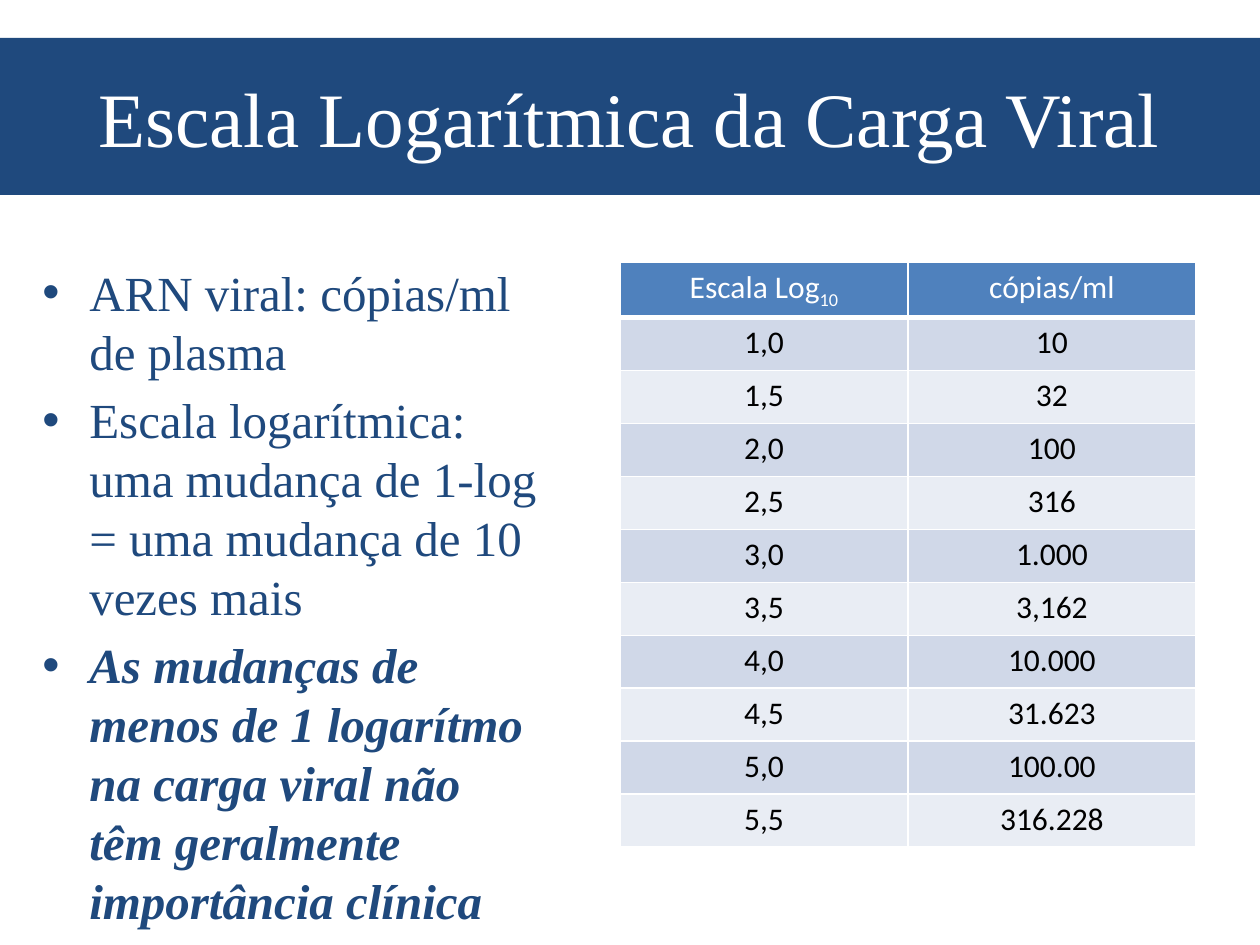
from dataclasses import dataclass

from lxml.etree import SubElement
from pptx import Presentation
from pptx.dml.color import RGBColor
from pptx.enum.shapes import MSO_SHAPE
from pptx.enum.text import MSO_ANCHOR, PP_ALIGN
from pptx.oxml.ns import qn
from pptx.util import Emu, Pt

EMU_PER_PX = 914400 / 126
SERIF, SANS = "Times New Roman", "Calibri"
NAVY = RGBColor(0x1F, 0x49, 0x7D)
BLUE = RGBColor(0x4F, 0x81, 0xBD)
BAND_DARK = RGBColor(0xD0, 0xD8, 0xE8)
BAND_LIGHT = RGBColor(0xE9, 0xED, 0xF4)
WHITE = RGBColor(0xFF, 0xFF, 0xFF)
BLACK = RGBColor(0x00, 0x00, 0x00)


@dataclass(frozen=True)
class Box:
    x: int
    y: int
    w: int
    h: int

    def emu(self) -> tuple:
        return tuple(px(v) for v in (self.x, self.y, self.w, self.h))


@dataclass(frozen=True)
class Bullet:
    text: str
    strong: bool = False


@dataclass(frozen=True)
class Reading:
    log: str
    copies: str


TITLE = Box(0, 38, 1260, 157)
BODY = Box(30, 256, 527, 646)
TABLE = Box(620, 262, 576, 583)
BULLET_INDENT = 47

BULLETS = [
    Bullet("ARN viral: cópias/ml de plasma"),
    Bullet("Escala logarítmica: uma mudança de 1-log = uma mudança de 10 vezes mais"),
    Bullet("As mudanças de menos de 1 logarítmo na carga viral não têm "
           "geralmente importância clínica", strong=True),
]
READINGS = [
    Reading("1,0", "10"),
    Reading("1,5", "32"),
    Reading("2,0", "100"),
    Reading("2,5", "316"),
    Reading("3,0", "1.000"),
    Reading("3,5", "3,162"),
    Reading("4,0", "10.000"),
    Reading("4,5", "31.623"),
    Reading("5,0", "100.00"),
    Reading("5,5", "316.228"),
]


def px(value: int) -> Emu:
    return Emu(round(value * EMU_PER_PX))


def add_text(p, text: str, *, size: int, font: str, color: RGBColor,
             align=None, strong: bool = False, baseline: int = 0) -> None:
    if align is not None:
        p.alignment = align
    r = p.add_run()
    r.text = text
    r.font.size, r.font.name = Pt(size), font
    r.font.color.rgb = color
    if strong:
        r.font.bold = r.font.italic = True
    if baseline:
        r.font._element.set("baseline", str(baseline * 1000))


def add_title(slide, text: str) -> None:
    sp = slide.shapes.add_shape(MSO_SHAPE.RECTANGLE, *TITLE.emu())
    sp.shadow.inherit = False
    sp.fill.solid()
    sp.fill.fore_color.rgb = NAVY
    sp.line.fill.background()
    tf = sp.text_frame
    tf.word_wrap = True
    tf.vertical_anchor = MSO_ANCHOR.MIDDLE
    add_text(tf.paragraphs[0], text, size=44, font=SERIF, color=WHITE,
             align=PP_ALIGN.CENTER)


def set_bullet(p) -> None:
    pPr = p._p.get_or_add_pPr()
    pPr.set("marL", str(px(BULLET_INDENT)))
    pPr.set("indent", str(-px(BULLET_INDENT)))
    spacing = SubElement(pPr, qn("a:spcBef"))
    SubElement(spacing, qn("a:spcPct")).set("val", "20000")
    SubElement(pPr, qn("a:buFont")).set("typeface", "Arial")
    SubElement(pPr, qn("a:buChar")).set("char", "•")


def add_bullets(slide, bullets: list[Bullet]) -> None:
    tf = slide.shapes.add_textbox(*BODY.emu()).text_frame
    tf.word_wrap = True
    for i, bullet in enumerate(bullets):
        p = tf.add_paragraph() if i else tf.paragraphs[0]
        set_bullet(p)
        add_text(p, bullet.text, size=28, font=SERIF, color=NAVY,
                 strong=bullet.strong)


def style_cell(cell, fill: RGBColor, bottom: int = 1, top: int = 1) -> None:
    tcPr = cell._tc.get_or_add_tcPr()
    for side, width in (("L", 1), ("R", 1), ("T", top), ("B", bottom)):
        ln = SubElement(tcPr, qn(f"a:ln{side}"), w=str(Pt(width)))
        solid = SubElement(ln, qn("a:solidFill"))
        SubElement(solid, qn("a:srgbClr"), val=str(WHITE))
    cell.fill.solid()
    cell.fill.fore_color.rgb = fill


def add_scale_table(slide, readings: list[Reading]) -> None:
    rows = len(readings) + 1
    table = slide.shapes.add_table(rows, 2, *TABLE.emu()).table
    for col in table.columns:
        col.width = px(TABLE.w // 2)
    for row in table.rows:
        row.height = px(TABLE.h // rows)

    values = [("Escala Log", "cópias/ml")] + [(x.log, x.copies) for x in readings]
    for i, row in enumerate(values):
        header = i == 0
        fill = BLUE if header else BAND_DARK if i % 2 else BAND_LIGHT
        for j, text in enumerate(row):
            cell = table.cell(i, j)
            style_cell(cell, fill, bottom=3 if header else 1, top=3 if i == 1 else 1)
            add_text(cell.text_frame.paragraphs[0], text, size=18, font=SANS,
                     color=WHITE if header else BLACK, align=PP_ALIGN.CENTER)
    add_text(table.cell(0, 0).text_frame.paragraphs[0], "10", size=18,
             font=SANS, color=WHITE, baseline=-25)


def main() -> None:
    prs = Presentation()
    prs.slide_width, prs.slide_height = px(1260), px(945)
    slide = prs.slides.add_slide(prs.slide_layouts[6])
    add_title(slide, "Escala Logarítmica da Carga Viral")
    add_scale_table(slide, READINGS)
    add_bullets(slide, BULLETS)
    prs.save("out.pptx")


if __name__ == "__main__":
    main()
